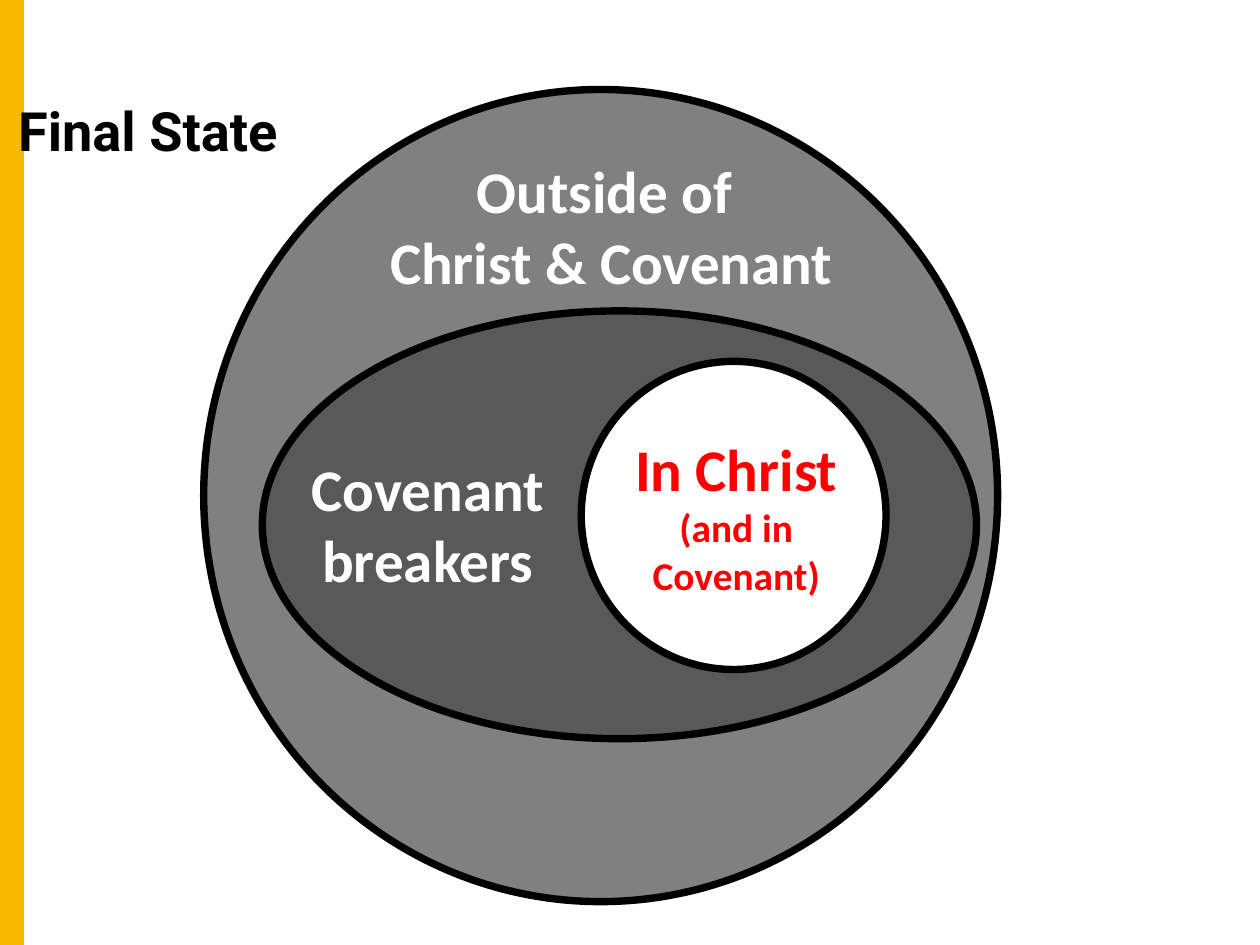
from dataclasses import dataclass
from pptx import Presentation
from pptx.dml.color import RGBColor
from pptx.enum.shapes import MSO_CONNECTOR as Connector, MSO_SHAPE as Shape
from pptx.enum.text import MSO_ANCHOR as Anchor, PP_ALIGN as Align
from pptx.oxml.ns import qn
from pptx.util import Inches, Pt
from lxml.etree import SubElement


@dataclass(frozen=True)
class Theme:
    outside: str = "808080"
    breakers: str = "595959"
    white: str = "FFFFFF"
    black: str = "000000"
    red: str = "FF0000"
    gold: str = "F7BA01"
    body: str = "Calibri"
    heading: str = "Roboto"
    large: int = 48
    title: int = 44
    small: int = 32
    outline: int = 6
    bar: int = 20


theme = Theme()
WIDTH, HEIGHT = Inches(14.22), Inches(10.67)
INSET = Inches(0.06)

# Areas are left, top, width and height in percent of the slide.
ELLIPSES = [
    ((16.17, 9.47, 63.01, 85.94), theme.outside),
    ((20.82, 32.9, 56.68, 45.27), theme.breakers),
    ((46.13, 38.24, 24.19, 32.61), theme.white),
]
BAR_CENTRE = 0.91
LABELS = [
    ((26.37, 15.75, 44.3, 16.21), theme.body, theme.white,
     [("Outside of ", theme.large), ("Christ & Covenant", theme.large)]),
    ((47.05, 45.17, 22.78, 18.74), theme.body, theme.red,
     [("In Christ", theme.large), ("(and in Covenant)", theme.small)]),
    ((22.57, 47.24, 22.78, 16.21), theme.body, theme.white,
     [("Covenant", theme.large), ("breakers", theme.large)]),
    ((BAR_CENTRE, 6.28, 21.66, 14.9), theme.heading, theme.black,
     [("Final State", theme.title)]),
]


def color(value):
    return RGBColor.from_string(value)


def place(area):
    return [round(share * size / 100)
            for share, size in zip(area, (WIDTH, HEIGHT) * 2)]


def add_ellipse(page, area, fill):
    ellipse = page.shapes.add_shape(Shape.OVAL, *place(area))
    ellipse.shadow.inherit = False
    ellipse.fill.solid()
    ellipse.fill.fore_color.rgb = color(fill)
    ellipse.line.color.rgb = color(theme.black)
    ellipse.line.width = Pt(theme.outline)


def add_bar(page):
    centre = round(WIDTH * BAR_CENTRE / 100)
    bar = page.shapes.add_connector(Connector.STRAIGHT, centre, HEIGHT, centre, 0)
    bar.line.color.rgb = color(theme.gold)
    bar.line.width = Pt(theme.bar)
    SubElement(bar.element.spPr, qn("a:effectLst"))


def add_label(page, area, font, ink, lines):
    frame = page.shapes.add_textbox(*place(area)).text_frame
    frame.word_wrap = True
    frame.vertical_anchor = Anchor.MIDDLE
    frame.margin_left = frame.margin_right = INSET
    frame.margin_top = frame.margin_bottom = INSET
    frame.text = "\n".join(text for text, size in lines)
    for para, (text, size) in zip(frame.paragraphs, lines):
        para.alignment = Align.CENTER
        para.font.name = font
        para.font.size = Pt(size)
        para.font.bold = True
        para.font.color.rgb = color(ink)


def main():
    deck = Presentation()
    deck.slide_width, deck.slide_height = WIDTH, HEIGHT
    page = deck.slides.add_slide(deck.slide_layouts[6])
    for ellipse in ELLIPSES:
        add_ellipse(page, *ellipse)
    add_bar(page)
    for label in LABELS:
        add_label(page, *label)
    deck.save("out.pptx")


if __name__ == "__main__":
    main()
